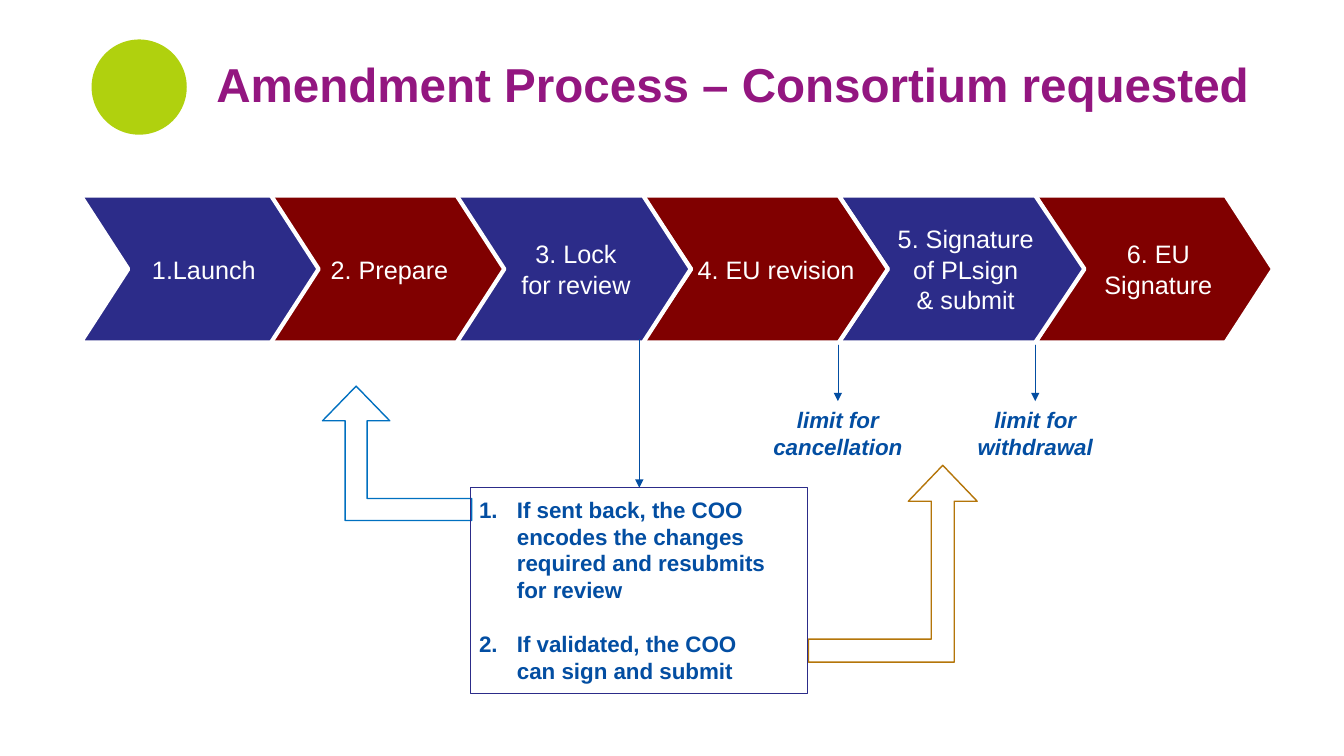
from lxml import etree
from pptx import Presentation
from pptx.dml.color import RGBColor
from pptx.enum import shapes, text
from pptx.oxml import ns
from pptx.util import Pt

COLORS = {
    "title": "931680", "lime": "B0D10E", "navy": "2C2C89", "maroon": "800000",
    "blue": "034EA2", "sky": "0070C0", "amber": "B47509", "white": "FFFFFF",
}
STEPS = [
    (0, 170, 6, "1.Launch"),
    (132.6, 170, 6, "2. Prepare"),
    (265.8, 170, 6, "3. Lock\nfor review"),
    (401, 175.6, 16, "4. EU revision"),
    (541.4, 175.6, 6, "5. Signature\nof PLsign\n& submit"),
    (681.8, 170, 6, "6. EU\nSignature"),
]
NOTES = [
    "If sent back, the COO encodes the changes required and resubmits for review",
    "If validated, the COO can sign and submit",
]


def color(name):
    return RGBColor.from_string(COLORS[name])


def set_margins(tf, left, top, right, bottom):
    tf.margin_left, tf.margin_top = Pt(left), Pt(top)
    tf.margin_right, tf.margin_bottom = Pt(right), Pt(bottom)


def format_runs(tf, size, name, bold=False, italic=False, align=text.PP_ALIGN.LEFT):
    for p in tf.paragraphs:
        p.alignment = align
        for r in p.runs:
            r.font.name, r.font.size = "Arial", Pt(size)
            r.font.bold, r.font.italic = bold, italic
            r.font.color.rgb = color(name)


def add_shape(s, kind, x, y, w, h, fill=None, line=None, width=1):
    sp = s.shapes.add_shape(kind, Pt(x), Pt(y), Pt(w), Pt(h))
    sp.shadow.inherit = False
    if fill:
        sp.fill.solid()
        sp.fill.fore_color.rgb = color(fill)
    else:
        sp.fill.background()
    if line:
        sp.line.color.rgb = color(line)
        sp.line.width = Pt(width)
    else:
        sp.line.fill.background()
    return sp


def add_arrow(s, x, top, bottom):
    sp = s.shapes.add_connector(
        shapes.MSO_CONNECTOR.STRAIGHT, Pt(x), Pt(top), Pt(x), Pt(bottom))
    sp.line.color.rgb = color("blue")
    sp.line.width = Pt(0.5)
    etree.SubElement(sp.line._get_or_add_ln(), ns.qn("a:tailEnd"), type="triangle")
    etree.SubElement(sp._element.spPr, ns.qn("a:effectLst"))


def add_bent_arrow(s, x, y, w, h, line, adjustments, flip=False):
    sp = add_shape(s, shapes.MSO_SHAPE.BENT_UP_ARROW, x, y, w, h, line=line)
    for i, value in enumerate(adjustments):
        sp.adjustments[i] = value
    if flip:
        sp._element.spPr.xfrm.set("flipH", "1")


def add_header(s, x, y, w, h):
    add_shape(s, shapes.MSO_SHAPE.OVAL, x, y, h, h, fill="lime")
    title = s.shapes.title
    title.left, title.top = Pt(x + 82), Pt(y + 12)
    title.width, title.height = Pt(w - 82), Pt(41)
    tf = title.text_frame
    tf.text = "Amendment Process – Consortium requested"
    tf.auto_size = text.MSO_AUTO_SIZE.NONE
    tf.vertical_anchor = text.MSO_ANCHOR.MIDDLE
    set_margins(tf, 7.2, 3.6, 7.2, 0)
    tf.paragraphs[0].line_spacing = 0.9
    format_runs(tf, 34, "title", bold=True)


def add_process(s, x, y, h):
    for i, (left, width, inset, label) in reversed(list(enumerate(STEPS))):
        fill = "maroon" if i % 2 else "navy"
        sp = add_shape(s, shapes.MSO_SHAPE.CHEVRON, x + left, y, width, h,
                       fill=fill, line="white", width=3)
        sp.adjustments[0] = 0.2 * width / h
        tf = sp.text_frame
        tf.text = label
        tf.word_wrap = False
        tf.vertical_anchor = text.MSO_ANCHOR.MIDDLE
        set_margins(tf, inset, 0, 0, 0)
        format_runs(tf, 18, "white", align=text.PP_ALIGN.CENTER)


def add_limit(s, x, y, w, h, label):
    add_arrow(s, x + w / 2, y, y + h)
    sp = s.shapes.add_textbox(Pt(x), Pt(y + h), Pt(w), Pt(46))
    tf = sp.text_frame
    tf.word_wrap = True
    tf.text = label
    format_runs(tf, 16, "blue", bold=True, italic=True, align=text.PP_ALIGN.CENTER)


def add_review(s, x, y, w, h):
    add_arrow(s, x + w / 2, y - 106, y)
    add_bent_arrow(s, x - 106, y - 72.6, 106.5, 96, "sky", (0.164, 0.25, 0.258), flip=True)
    add_bent_arrow(s, x + w + 0.5, y - 16, 120.5, 140.6, "amber", (0.136, 0.204, 0.213))
    sp = add_shape(s, shapes.MSO_SHAPE.RECTANGLE, x, y, w, h, line="navy", width=0.72)
    tf = sp.text_frame
    tf.text = "\n".join(NOTES)
    tf.word_wrap = True
    tf.vertical_anchor = text.MSO_ANCHOR.TOP
    set_margins(tf, 5.8, 5.8, 24, 5.8)
    for i, p in enumerate(tf.paragraphs, 1):
        pPr = p._p.get_or_add_pPr()
        pPr.set("marL", str(Pt(27)))
        pPr.set("indent", str(-Pt(27)))
        etree.SubElement(pPr, ns.qn("a:buFont"), typeface="+mj-lt")
        etree.SubElement(pPr, ns.qn("a:buAutoNum"), type="arabicPeriod", startAt=str(i))
    tf.paragraphs[0].space_after = Pt(19)
    format_runs(tf, 16, "blue", bold=True)


def main():
    prs = Presentation()
    prs.slide_width, prs.slide_height = Pt(960), Pt(540)
    s = prs.slides.add_slide(prs.slide_layouts[5])
    add_header(s, 65.4, 28.2, 844.6, 68)
    add_limit(s, 543, 245, 111, 41.6, "limit for cancellation")
    add_limit(s, 684, 245, 111, 41.6, "limit for withdrawal")
    add_process(s, 57.6, 139.7, 105)
    add_review(s, 336.4, 348.4, 240.6, 147)
    prs.save("out.pptx")


if __name__ == "__main__":
    main()
